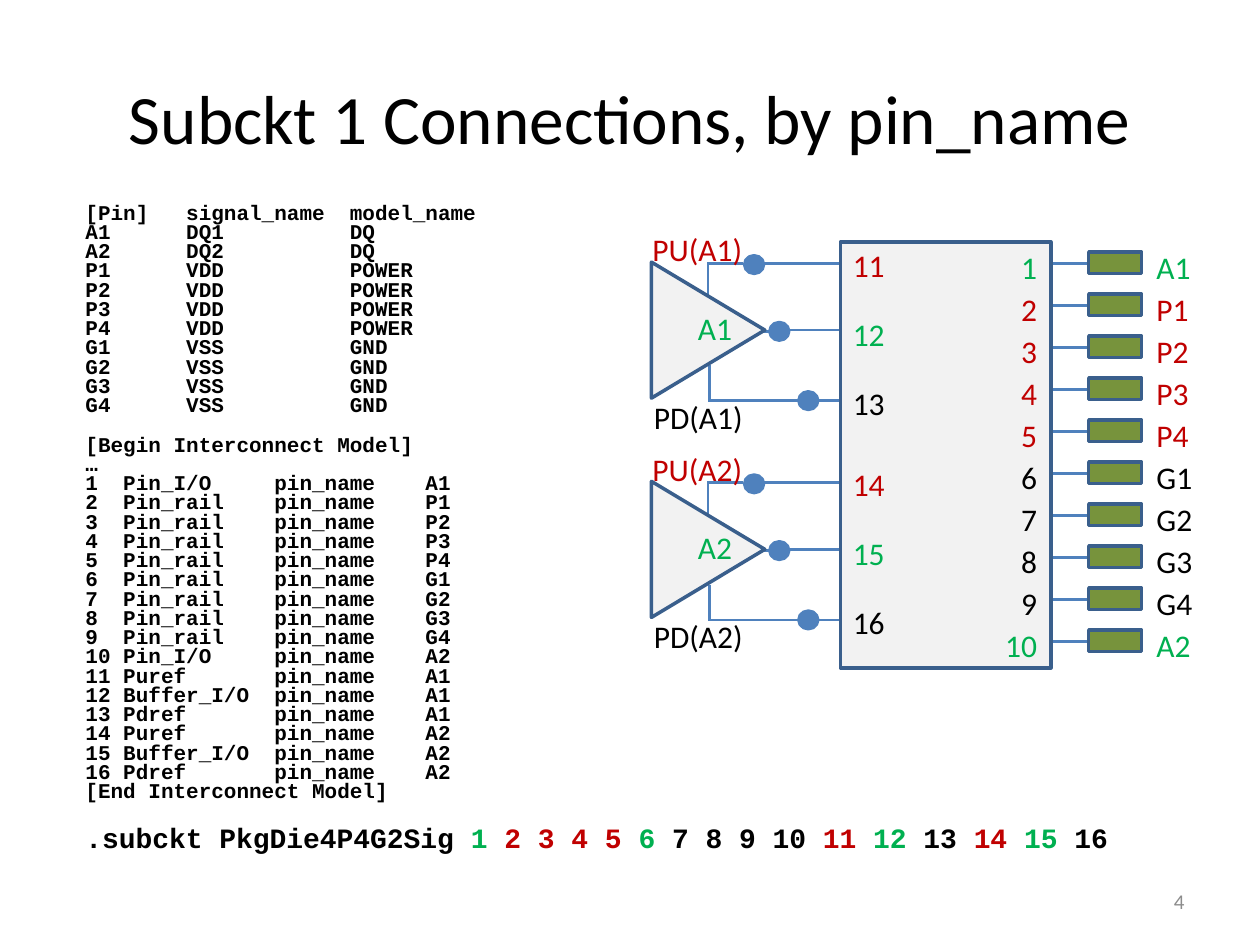
from pptx import Presentation
from pptx.util import Inches, Pt
from pptx.dml.color import RGBColor
from pptx.enum.shapes import MSO_SHAPE as Kind, MSO_CONNECTOR as Link
from pptx.enum.text import PP_ALIGN as Align, MSO_ANCHOR as Anchor
from pptx.oxml.ns import qn
from lxml import etree

BLACK = RGBColor(0x00, 0x00, 0x00)
RED = RGBColor(0xC0, 0x00, 0x00)
GREEN = RGBColor(0x00, 0xB0, 0x50)
GRAY = RGBColor(0x8C, 0x8C, 0x8C)
PALE = RGBColor(0xF2, 0xF2, 0xF2)
OLIVE = RGBColor(0x77, 0x93, 0x3C)
BLUE = RGBColor(0x4F, 0x81, 0xBD)
EDGE = RGBColor(0x3A, 0x5F, 0x8C)

deck = Presentation()
deck.slide_width, deck.slide_height = Inches(10), Inches(7.5)
slide = deck.slides.add_slide(deck.slide_layouts[6])


def block(kind, x, y, w, h, fill, edge):
    """Add a filled shape with a 2 pt outline."""
    item = slide.shapes.add_shape(kind, Inches(x), Inches(y), Inches(w), Inches(h))
    item.shadow.inherit = False
    item.fill.solid()
    item.fill.fore_color.rgb = fill
    item.line.color.rgb = edge
    item.line.width = Pt(2)
    return item


def write(x, y, w, h, rows, size=18, face="Calibri", bold=False, wrap=True,
          align=Align.LEFT, anchor=Anchor.TOP, after=None, pitch=None):
    """Add a text box; each row is a list of (text, colour) runs."""
    frame = slide.shapes.add_textbox(
        Inches(x), Inches(y), Inches(w), Inches(h)).text_frame
    frame.word_wrap = wrap
    frame.vertical_anchor = anchor
    for i, runs in enumerate(rows):
        para = frame.paragraphs[0] if i == 0 else frame.add_paragraph()
        para.alignment = align
        para.font.size, para.font.name, para.font.bold = Pt(size), face, bold
        if after:
            para.space_after = Pt(after)
        if pitch:
            para.line_spacing = Pt(pitch)
        for words, color in runs:
            run = para.add_run()
            run.text = words
            run.font.color.rgb = color


STEP = 1 / 3    # pitch of the package pins
DROP = 1.74     # distance between the two buffers
pins = [("A1", GREEN), ("P1", RED), ("P2", RED), ("P3", RED), ("P4", RED),
        ("G1", BLACK), ("G2", BLACK), ("G3", BLACK), ("G4", BLACK), ("A2", GREEN)]
bufs = [("A1", 0, 11), ("A2", DROP, 14)]

# Wires, behind everything else
wires = [(8.28, 2.09 + i * STEP, 8.64, 2.09 + i * STEP) for i in range(len(pins))]
for name, dy, first in bufs:
    wires += [(x1, y1 + dy, x2, y2 + dy) for x1, y1, x2, y2 in [
        (5.62, 2.08, 5.62, 2.35), (5.62, 2.09, 5.9, 2.09), (6.06, 2.09, 6.67, 2.09),
        (6.04, 2.63, 6.17, 2.63), (6.26, 2.62, 6.67, 2.62),
        (5.63, 2.9, 5.63, 3.17), (5.62, 3.18, 6.34, 3.18), (6.17, 3.18, 6.67, 3.18)]]
for ends in wires:
    wire = slide.shapes.add_connector(Link.STRAIGHT, *[Inches(v) for v in ends])
    wire.line.color.rgb = BLUE
    wire.line.width = Pt(1.5)
    etree.SubElement(wire._element.spPr, qn("a:effectLst"))

# Title
write(0.5, 0.3, 9, 1.25, [[("Subckt 1 Connections, by pin_name", BLACK)]],
      size=39.6, align=Align.CENTER, anchor=Anchor.MIDDLE)

# Chip, pads and pin labels
block(Kind.RECTANGLE, 6.67, 1.92, 1.67, 3.38, PALE, EDGE)
for i in range(len(pins)):
    block(Kind.RECTANGLE, 8.64, 2 + i * STEP, 0.42, 0.17, OLIVE, EDGE)
write(9.08, 1.92, 0.5, 3.38, [[pin] for pin in pins], after=2.4)
write(7.83, 1.92, 0.5, 3.38,
      [[(str(i), color)] for i, (name, color) in enumerate(pins, 1)],
      align=Align.RIGHT, after=2.4)

# Buffers with their terminals
for name, dy, first in bufs:
    block(Kind.ISOSCELES_TRIANGLE, 5.08, 2.17 + dy, 1.08, 0.9, PALE, EDGE).rotation = 90
    for x, y in [(5.91, 2.03), (6.11, 2.56), (6.34, 3.11)]:
        block(Kind.OVAL, x, y + dy, 0.15, 0.14, BLUE, BLUE)
    for x, y, w, words, color in [(5.08, 1.78, 0.92, f"PU({name})", RED),
                                  (5.09, 3.11, 0.92, f"PD({name})", BLACK),
                                  (5.44, 2.4, 0.48, name, GREEN)]:
        write(x, y + dy, w, 0.4, [[(words, color)]], wrap=False)
    write(6.67, 1.9 + dy, 0.46, 1.51,
          [[(str(first + i), color)] for i, color in enumerate([RED, GREEN, BLACK])],
          wrap=False, after=18)

# Pin listing, in fixed-width columns
nets = {"A": ("DQ", "DQ"), "P": ("VDD", "POWER"), "G": ("VSS", "GND")}
table = [("[Pin]", "signal_name", "model_name")]
for name in ["A1", "A2"] + [pin for pin, color in pins[1:-1]]:
    signal, model = nets[name[0]]
    table.append((name, signal + name[1] if name[0] == "A" else signal, model))
code = dict(face="Courier New", bold=True)
write(0.58, 1.58, 4.08, 1.8, [[(f"{a:8}{b:13}{c}", BLACK)] for a, b, c in table],
      size=12, pitch=11, **code)

# Interconnect model listing
ports = [("Pin_I/O" if pin[0] == "A" else "Pin_rail", pin) for pin, color in pins]
ports += [(role, name) for name, dy, first in bufs
          for role in ("Puref", "Buffer_I/O", "Pdref")]
lines = ["[Begin Interconnect Model]", "…"]
lines += [f"{i:<3}{role:12}{'pin_name':12}{pin}" for i, (role, pin) in enumerate(ports, 1)]
lines.append("[End Interconnect Model]")
write(0.58, 3.42, 4.08, 3.03, [[(line, BLACK)] for line in lines],
      size=12, pitch=11, **code)

# Subcircuit line
write(0.58, 6.46, 8.44, 0.37, [[
    (".subckt PkgDie4P4G2Sig ", BLACK), ("1 ", GREEN), ("2 3 4 5 ", RED), ("6", GREEN),
    (" 7 8 9 10 ", BLACK), ("11 ", RED), ("12", GREEN), (" 13 ", BLACK),
    ("14 ", RED), ("15", GREEN), (" 16", BLACK)]], size=16, wrap=False, **code)

# Slide number
write(7.17, 6.95, 2.33, 0.4, [[("4", GRAY)]], size=12,
      align=Align.RIGHT, anchor=Anchor.MIDDLE)

deck.save("out.pptx")
